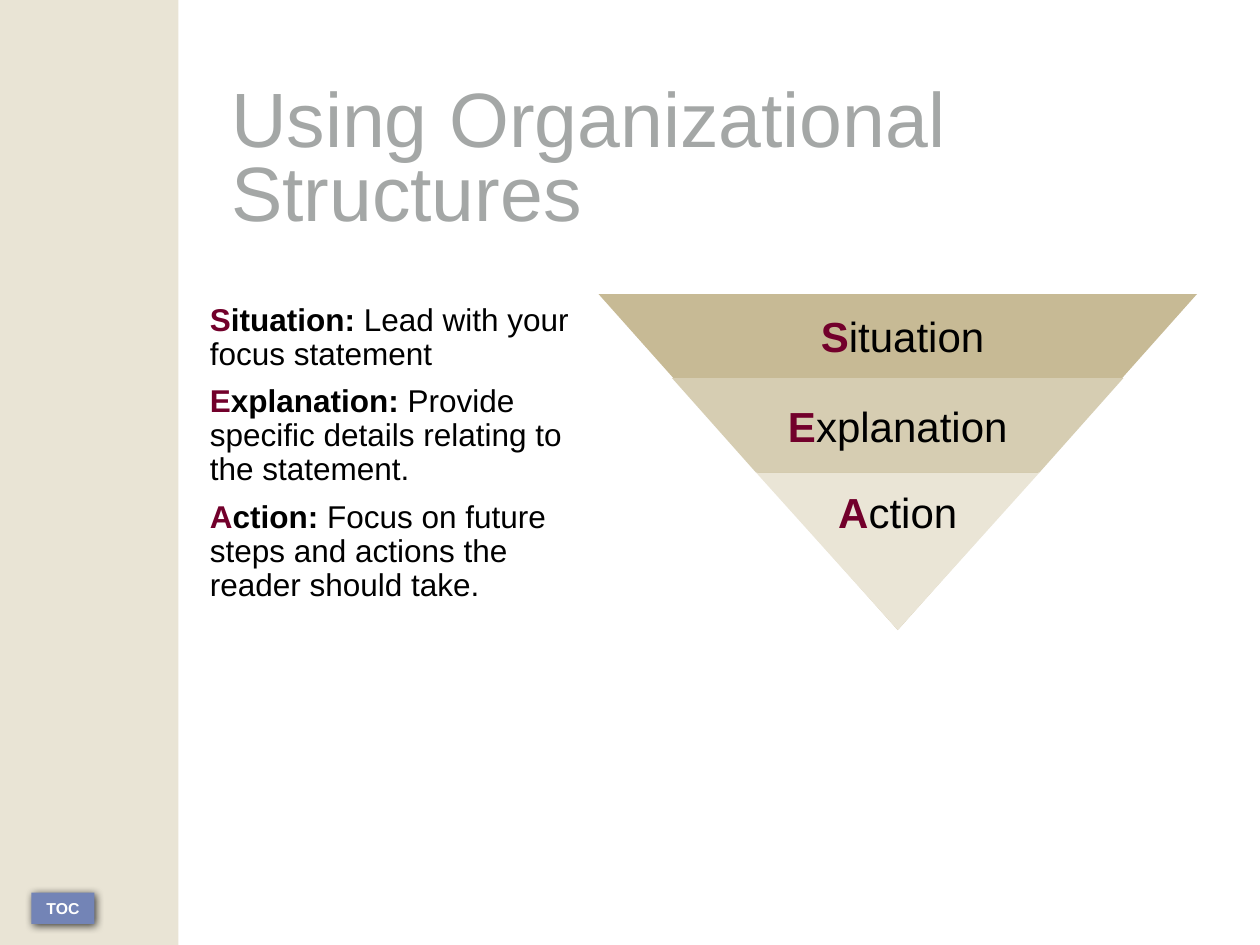
from dataclasses import dataclass

from lxml import etree
from pptx import Presentation, util as u
from pptx.dml.color import RGBColor
from pptx.enum import shapes, text
from pptx.oxml.ns import qn


@dataclass(frozen=True)
class Theme:
    font: str = "Arial"
    title_size: int = 44
    label_size: int = 24
    body_size: int = 18
    button_size: int = 9
    title: str = "A4A7A6"
    accent: str = "72002B"
    ink: str = "000000"
    paper: str = "FFFFFF"
    sidebar: str = "E9E4D5"
    button: str = "7384B6"
    top_band: str = "C7BA95"
    middle_band: str = "D6CDB2"
    bottom_band: str = "EAE5D6"


THEME = Theme()
COLUMNS, ROWS = 120, 90  # twelve grid units to the inch
UNIT = u.Inches(10) // COLUMNS

STEPS = [
    ("Situation:", " Lead with your focus statement"),
    ("Explanation:", " Provide specific details relating to the statement."),
    ("Action:", " Focus on future steps and actions the reader should take."),
]


def grid(*units):
    return [u.Emu(round(n * UNIT)) for n in units]


def paint(shape, color):
    shape.shadow.inherit = False
    shape.fill.solid()
    shape.fill.fore_color.rgb = RGBColor.from_string(color)
    shape.line.fill.background()


def add_block(slide, kind, area, color, rotation=0):
    block = slide.shapes.add_shape(kind, *grid(*area))
    paint(block, color)
    block.rotation = rotation
    return block


def set_frame(frame, anchor, inset=None, wrap=True):
    frame.word_wrap = wrap
    frame.vertical_anchor = anchor
    if inset is not None:
        frame.margin_left = frame.margin_right = inset
        frame.margin_top = frame.margin_bottom = inset


def style_font(font, size, color):
    font.name = THEME.font
    font.size = u.Pt(size)
    font.color.rgb = RGBColor.from_string(color)


def add_initialed(paragraph, term, size, bold_term=False, detail=""):
    """Write a term with a bold accent initial, then any plain detail."""
    style_font(paragraph.font, size, THEME.ink)
    pieces = [
        (term[0], THEME.accent, True),
        (term[1:], THEME.ink, bold_term),
        (detail, THEME.ink, False),
    ]
    for words, color, bold in pieces:
        if words:
            run = paragraph.add_run()
            run.text = words
            style_font(run.font, size, color)
            run.font.bold = bold


def label(shape, term):
    set_frame(shape.text_frame, text.MSO_ANCHOR.MIDDLE, wrap=False)
    paragraph = shape.text_frame.paragraphs[0]
    paragraph.alignment = text.PP_ALIGN.CENTER
    add_initialed(paragraph, term, THEME.label_size)


def add_drop_shadow(shape):
    effects = shape._element.spPr.find(qn("a:effectLst"))
    shadow = etree.SubElement(
        effects, qn("a:outerShdw"), blurRad=str(u.Pt(5)), dist=str(u.Pt(1.4)),
        dir="2700000", algn="ctr", rotWithShape="0")
    color = etree.SubElement(shadow, qn("a:srgbClr"), val=THEME.ink)
    etree.SubElement(color, qn("a:alpha"), val="75000")


def add_sidebar(slide):
    rectangle = shapes.MSO_SHAPE.RECTANGLE
    add_block(slide, rectangle, (0, 0, 17, ROWS), THEME.sidebar)
    button = add_block(slide, rectangle, (3, 85, 6, 3), THEME.button)
    add_drop_shadow(button)
    set_frame(button.text_frame, text.MSO_ANCHOR.MIDDLE)
    paragraph = button.text_frame.paragraphs[0]
    paragraph.text = "TOC"
    paragraph.alignment = text.PP_ALIGN.CENTER
    style_font(paragraph.font, THEME.button_size, THEME.paper)
    paragraph.font.bold = True


def format_title(slide, heading):
    title = slide.shapes.title
    title.left, title.top, title.width, title.height = grid(22, 8, 91, 15)
    set_frame(title.text_frame, text.MSO_ANCHOR.MIDDLE, inset=0)
    title.text_frame.auto_size = text.MSO_AUTO_SIZE.NONE
    paragraph = title.text_frame.paragraphs[0]
    paragraph.text = heading
    paragraph.alignment = text.PP_ALIGN.LEFT
    paragraph.line_spacing = 0.8
    style_font(paragraph.font, THEME.title_size, THEME.title)


def add_inverted_pyramid(slide):
    triangle = shapes.MSO_SHAPE.ISOSCELES_TRIANGLE
    add_block(slide, triangle, (57, 28, 57, 32), THEME.top_band, 180)

    action = add_block(slide, triangle, (72, 45, 27, 15), THEME.bottom_band, 180)
    label(action, "Action")
    # Turn the text back upright inside the inverted triangle.
    action.text_frame._txBody.bodyPr.set("rot", "10800000")

    corners = [grid(*point) for point in ((64, 36), (72, 45), (99, 45), (107, 36))]
    outline = slide.shapes.build_freeform(*corners[0])
    outline.add_line_segments(corners[1:], close=True)
    explanation = outline.convert_to_shape()
    paint(explanation, THEME.middle_band)
    label(explanation, "Explanation")


def add_situation_label(slide):
    situation = slide.shapes.add_textbox(*grid(77, 29, 20, 6))
    set_frame(situation.text_frame, text.MSO_ANCHOR.TOP)
    add_initialed(situation.text_frame.paragraphs[0], "Situation", THEME.label_size)


def add_steps(slide):
    steps = slide.shapes.add_textbox(*grid(20, 29, 36, 29))
    paint(steps, THEME.paper)
    frame = steps.text_frame
    set_frame(frame, text.MSO_ANCHOR.TOP, inset=0)
    for index, (term, detail) in enumerate(STEPS):
        paragraph = frame.add_paragraph() if index else frame.paragraphs[0]
        paragraph.line_spacing = 0.9
        paragraph.space_before = u.Pt(7.5)
        add_initialed(paragraph, term, THEME.body_size, True, detail)


def main():
    deck = Presentation()
    deck.slide_width, deck.slide_height = grid(COLUMNS, ROWS)
    slide = deck.slides.add_slide(deck.slide_layouts.get_by_name("Title Only"))
    add_sidebar(slide)
    format_title(slide, "Using Organizational Structures")
    add_inverted_pyramid(slide)
    add_steps(slide)
    add_situation_label(slide)
    deck.save("out.pptx")


if __name__ == "__main__":
    main()
